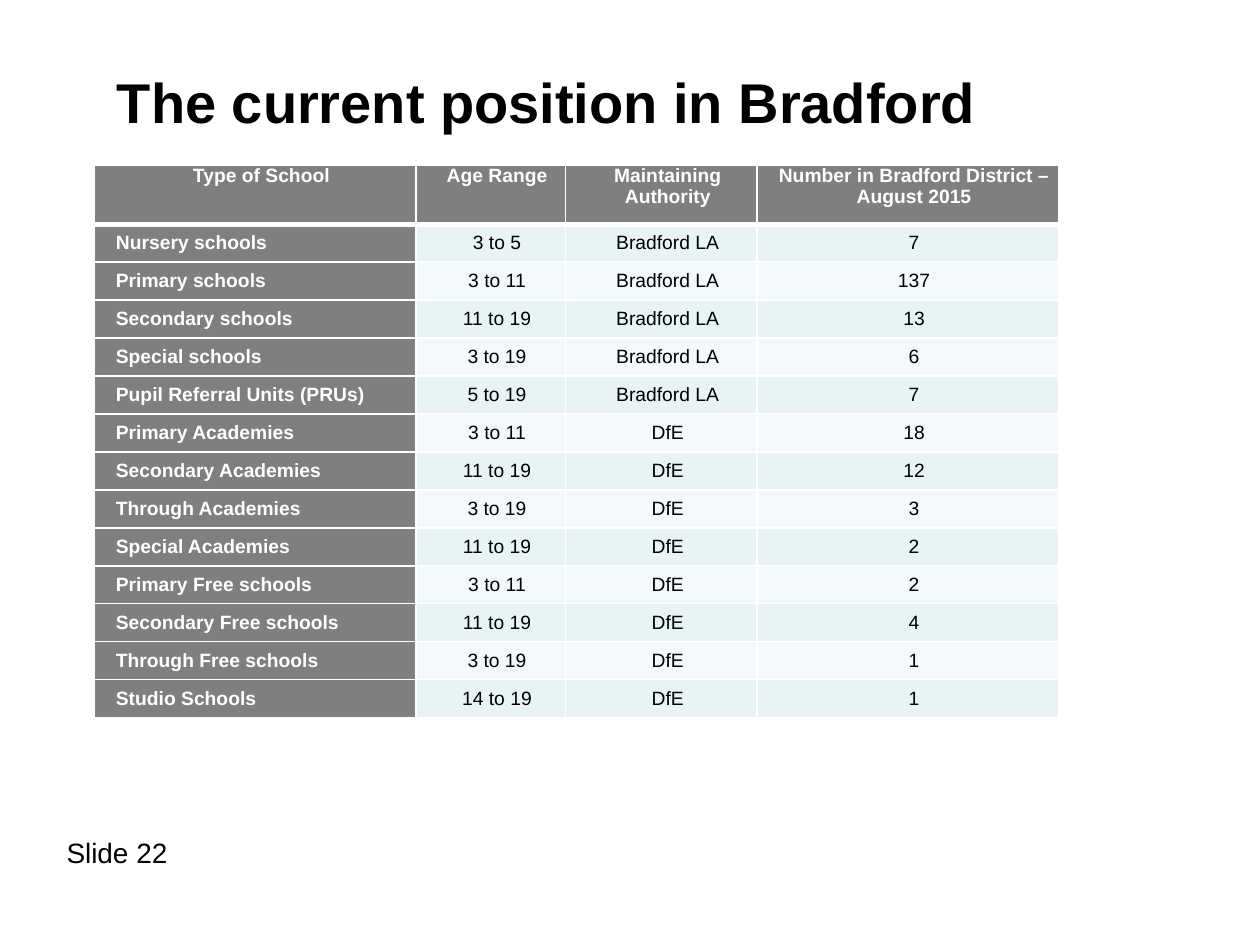
from lxml.etree import SubElement
from pptx import Presentation
from pptx.dml.color import RGBColor
from pptx.enum.text import MSO_ANCHOR as Anchor, PP_ALIGN as Align
from pptx.oxml import parse_xml
from pptx.oxml.ns import nsdecls, qn
from pptx.util import Inches, Pt

COLORS = {
    "text": "000000",
    "white": "FFFFFF",
    "heading": "7F7F7F",
    "odd_row": "E7F3F4",
    "even_row": "F3F9FA",
}
CELL_FORMAT = {
    "margin_left": Inches(0.07),
    "margin_right": Inches(0.07),
    "margin_top": 0,
    "margin_bottom": 0,
}
HEADERS = ("Type of School", "Age Range", "Maintaining Authority",
           "Number in Bradford District – August 2015")
SCHOOLS = [
    ("Nursery schools", "3 to 5", "Bradford LA", "7"),
    ("Primary schools", "3 to 11", "Bradford LA", "137"),
    ("Secondary schools", "11 to 19", "Bradford LA", "13"),
    ("Special schools", "3 to 19", "Bradford LA", "6"),
    ("Pupil Referral Units (PRUs)", "5 to 19", "Bradford LA", "7"),
    ("Primary Academies", "3 to 11", "DfE", "18"),
    ("Secondary Academies", "11 to 19", "DfE", "12"),
    ("Through Academies", "3 to 19", "DfE", "3"),
    ("Special Academies", "11 to 19", "DfE", "2"),
    ("Primary Free schools", "3 to 11", "DfE", "2"),
    ("Secondary Free schools", "11 to 19", "DfE", "4"),
    ("Through Free schools", "3 to 19", "DfE", "1"),
    ("Studio Schools", "14 to 19", "DfE", "1"),
]
COLUMN_WIDTHS = (2.55, 1.19, 1.52, 2.39)
TABLE_HEIGHT, HEADER_HEIGHT = 4.39, 0.47


def write_text(paragraph, text, size, color="text", bold=False):
    run = paragraph.add_run()
    run.text = text
    font_format = {"name": "Arial", "size": Pt(size), "bold": bold}
    for name, value in font_format.items():
        setattr(run.font, name, value)
    run.font.color.rgb = RGBColor.from_string(COLORS[color])


def add_borders(cell, widths):
    properties = cell._tc.get_or_add_tcPr()
    for index, (side, width) in enumerate(widths.items()):
        line = parse_xml(f'<a:ln{side} {nsdecls("a")} w="{Pt(width)}"/>')
        fill = SubElement(line, qn("a:solidFill"))
        SubElement(fill, qn("a:srgbClr"), val=COLORS["white"])
        properties.insert(index, line)


presentation = Presentation()
presentation.slide_width = Inches(10)
presentation.slide_height = Inches(7.5)
slide = presentation.slides.add_slide(presentation.slide_layouts[6])

# Slide number and title
for text, box, size, bold, anchor in [
    ("Slide 22", (0.43, 6.58, 1.1, 0.37), 16, False, Anchor.TOP),
    ("The current position in Bradford", (0.83, 0.44, 8.5, 0.72), 32, True, Anchor.MIDDLE),
]:
    frame = slide.shapes.add_textbox(*map(Inches, box)).text_frame
    frame.word_wrap = True
    frame.vertical_anchor = anchor
    write_text(frame.paragraphs[0], text, size, bold=bold)

# Table grid
rows = [HEADERS, *SCHOOLS]
table = slide.shapes.add_table(
    len(rows), len(HEADERS), Inches(0.75), Inches(1.31),
    Inches(sum(COLUMN_WIDTHS)), Inches(TABLE_HEIGHT)).table
for column, width in zip(table.columns, COLUMN_WIDTHS):
    column.width = Inches(width)
for row in table.rows:
    row.height = Inches((TABLE_HEIGHT - HEADER_HEIGHT) / len(SCHOOLS))
table.rows[0].height = Inches(HEADER_HEIGHT)

# Table cells: grey headings, alternating tints for the data
for row_index, row in enumerate(rows):
    for column_index, text in enumerate(row):
        cell = table.cell(row_index, column_index)
        for name, value in CELL_FORMAT.items():
            setattr(cell, name, value)
        cell.vertical_anchor = Anchor.MIDDLE if row_index else Anchor.TOP

        is_heading = row_index == 0 or column_index == 0
        tint = "odd_row" if row_index % 2 else "even_row"
        cell.fill.solid()
        cell.fill.fore_color.rgb = RGBColor.from_string(
            COLORS["heading" if is_heading else tint])
        add_borders(cell, {"L": 1, "R": 1,
                           "T": 3 if row_index == 1 else 1,
                           "B": 3 if row_index == 0 else 1})

        paragraph = cell.text_frame.paragraphs[0]
        paragraph.alignment = Align.LEFT if row_index and column_index == 0 else Align.CENTER
        paragraph_properties = paragraph._p.get_or_add_pPr()
        paragraph_properties.set("marL", str(Inches(0.1)))
        paragraph_properties.set("indent", "0")
        write_text(paragraph, text, 11, "white" if is_heading else "text", is_heading)

presentation.save("out.pptx")
